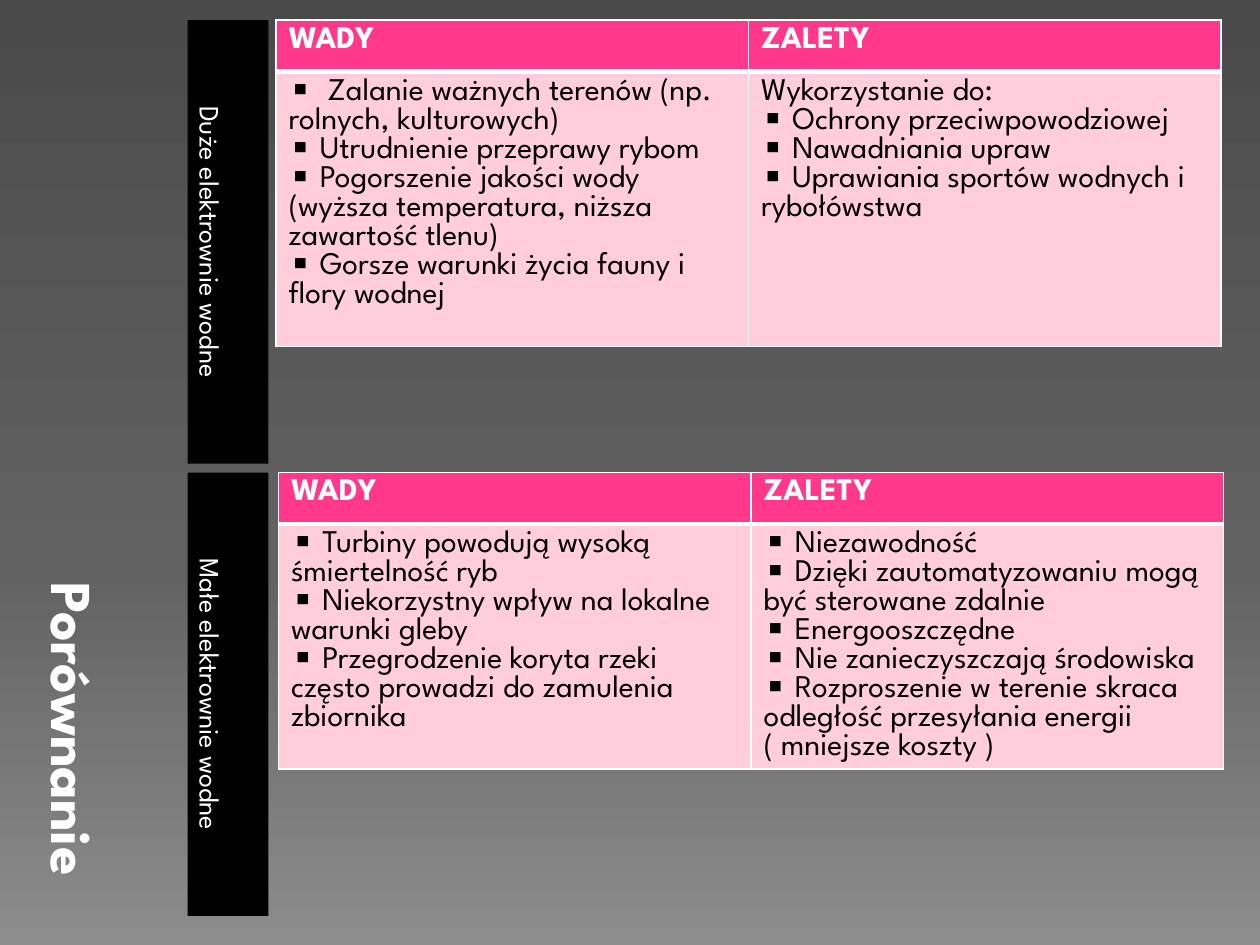
from lxml import etree
from pptx import Presentation
from pptx.dml.color import RGBColor
from pptx.enum import shapes, text
from pptx.oxml import ns
from pptx.util import Inches, Pt

COLORS = {
    "white": "FFFFFF",
    "black": "000000",
    "header": "FF388C",
    "body": "FFCEDA",
}
BACKGROUND = [(0, "4A4A4A"), (60, "626262"), (100, "8C8C8C")]
BULLET = "▪"
HEADERS = ["WADY", "ZALETY"]
SECTIONS = [
    {
        "label": "Duże elektrownie wodne",
        "top": 0.16,
        "table_left": 2.19,
        "body_height": 2.18,
        "columns": [
            [
                "▪  Zalanie ważnych terenów (np. rolnych, kulturowych)",
                "▪ Utrudnienie przeprawy rybom",
                "▪ Pogorszenie jakości wody (wyższa temperatura, niższa zawartość tlenu)",
                "▪ Gorsze warunki życia fauny i flory wodnej",
            ],
            [
                "Wykorzystanie do:",
                "▪ Ochrony przeciwpowodziowej",
                "▪ Nawadniania upraw",
                "▪ Uprawiania sportów wodnych i rybołówstwa",
            ],
        ],
    },
    {
        "label": "Małe elektrownie wodne",
        "top": 3.75,
        "table_left": 2.21,
        "body_height": 1.94,
        "columns": [
            [
                "▪ Turbiny powodują wysoką śmiertelność ryb",
                "▪ Niekorzystny wpływ na lokalne warunki gleby",
                "▪ Przegrodzenie koryta rzeki często prowadzi do zamulenia zbiornika",
            ],
            [
                "▪ Niezawodność",
                "▪ Dzięki zautomatyzowaniu mogą być sterowane zdalnie",
                "▪ Energooszczędne",
                "▪ Nie zanieczyszczają środowiska",
                "▪ Rozproszenie w terenie skraca odległość przesyłania energii ( mniejsze koszty )",
            ],
        ],
    },
]


def add_xml(parent, tag, **attributes):
    return etree.SubElement(parent, ns.qn(tag), attributes)


class SlideBuilder:
    font = "League Spartan"

    def __init__(self, slide):
        self.slide = slide

    def background(self, stops):
        self.slide.background.fill.gradient()
        grad = self.slide.element.find(".//" + ns.qn("a:gradFill"))
        for child in list(grad):
            grad.remove(child)
        stop_list = add_xml(grad, "a:gsLst")
        for position, color in stops:
            stop = add_xml(stop_list, "a:gs", pos=str(position * 1000))
            add_xml(stop, "a:srgbClr", val=color)
        add_xml(grad, "a:lin", ang="5400000", scaled="0")

    def paragraph(self, p, words, size, color, bold=False):
        if words.startswith(BULLET):
            words = words.removeprefix(BULLET)
            props = p._p.get_or_add_pPr()
            props.set("marL", "0")
            props.set("indent", "0")
            add_xml(props, "a:buChar", char=BULLET)
        p.add_run().text = words
        p.font.name = self.font
        p.font.size = Pt(size)
        p.font.bold = bold
        p.font.color.rgb = RGBColor.from_string(COLORS[color])

    def vertical_text(self, sp, words, size, align, bold=False):
        tf = sp.text_frame
        tf.word_wrap = True
        tf.vertical_anchor = text.MSO_ANCHOR.BOTTOM
        tf._txBody.bodyPr.set("vert", "vert")
        p = tf.paragraphs[0]
        p.alignment = align
        self.paragraph(p, words, size, "white", bold)

    def title(self, words, *box):
        sp = self.slide.shapes.add_textbox(*map(Inches, box))
        self.vertical_text(sp, words, 33, text.PP_ALIGN.RIGHT, True)

    def label(self, words, *box):
        sp = self.slide.shapes.add_shape(
            shapes.MSO_SHAPE.RECTANGLE, *map(Inches, box)
        )
        sp.shadow.inherit = False
        sp.fill.solid()
        sp.fill.fore_color.rgb = RGBColor.from_string(COLORS["black"])
        sp.line.fill.background()
        self.vertical_text(sp, words, 16, text.PP_ALIGN.CENTER)

    def borders(self, cell, **widths):
        props = cell._tc.get_or_add_tcPr()
        for index, side in enumerate("LRTB"):
            width = Pt(widths.get(side, 1))
            line = etree.Element(ns.qn("a:ln" + side), w=str(width))
            fill = add_xml(line, "a:solidFill")
            add_xml(fill, "a:srgbClr", val=COLORS["white"])
            props.insert(index, line)

    def cell(self, cell, lines, fill, color, bold, **widths):
        cell.fill.solid()
        cell.fill.fore_color.rgb = RGBColor.from_string(COLORS[fill])
        self.borders(cell, **widths)
        tf = cell.text_frame
        for index, words in enumerate(lines):
            p = tf.add_paragraph() if index else tf.paragraphs[0]
            self.paragraph(p, words, 18, color, bold)

    def table(self, columns, left, top, body_height):
        heights = [0.41, body_height]
        frame = self.slide.shapes.add_table(
            2, 2, Inches(left), Inches(top), Inches(7.5), Inches(sum(heights))
        )
        table = frame.table
        for row, height in zip(table.rows, heights):
            row.height = Inches(height)
        for col, (header, lines) in enumerate(zip(HEADERS, columns)):
            self.cell(table.cell(0, col), [header], "header", "white", True, B=3)
            self.cell(table.cell(1, col), lines, "body", "black", False, T=3)


def main():
    prs = Presentation()
    prs.slide_width = Inches(10)
    prs.slide_height = Inches(7.5)
    builder = SlideBuilder(prs.slides.add_slide(prs.slide_layouts[6]))
    builder.background(BACKGROUND)
    builder.title("Porównanie", 0.27, 0.32, 1.17, 6.73)
    for section in SECTIONS:
        top = section["top"]
        builder.label(section["label"], 1.49, top, 0.64, 3.52)
        builder.table(
            section["columns"], section["table_left"], top, section["body_height"]
        )
    prs.save("out.pptx")


if __name__ == "__main__":
    main()
